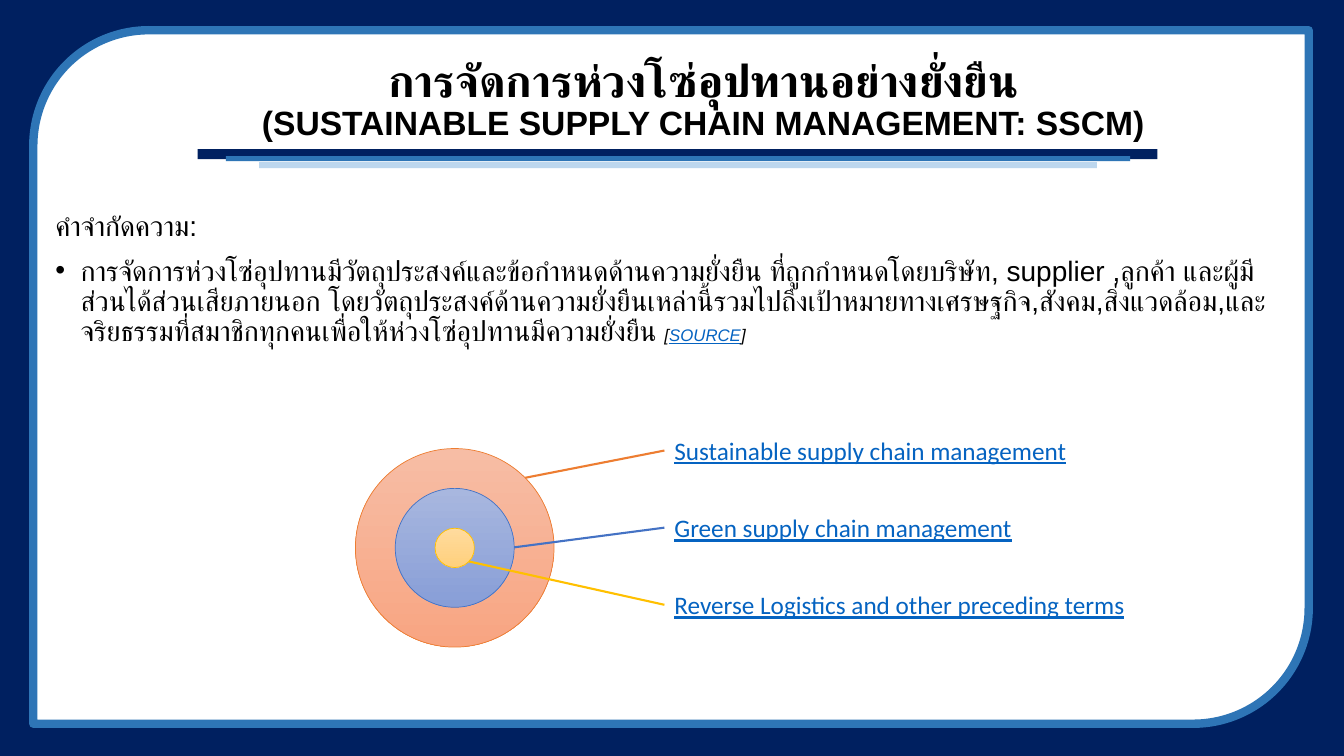
from lxml import etree
from pptx import Presentation
from pptx import util as u
from pptx.dml.color import RGBColor
from pptx.enum import shapes, text
from pptx.oxml.ns import qn

# Content
HEADING = ["การจัดการห่วงโซ่อุปทานอย่างยั่งยืน", "(SUSTAINABLE SUPPLY CHAIN MANAGEMENT: SSCM)"]
HEADING_SIZES = [32, 24]
LEAD = "คำจำกัดความ:"
DEFINITION = (
    "การจัดการห่วงโซ่อุปทานมีวัตถุประสงค์และข้อกำหนดด้านความยั่งยืน ที่ถูกกำหนดโดยบริษัท, supplier ,ลูกค้า "
    "และผู้มีส่วนได้ส่วนเสียภายนอก โดยวัตถุประสงค์ด้านความยั่งยืนเหล่านี้รวมไปถึงเป้าหมายทางเศรษฐกิจ,สังคม,"
    "สิ่งแวดล้อม,และจริยธรรมที่สมาชิกทุกคนเพื่อให้ห่วงโซ่อุปทานมีความยั่งยืน "
)
CITATION = ["[", "SOURCE", "]"]
# label, radius, gradient top, gradient bottom, line, leader start
RINGS = [
    ("Sustainable supply chain management", 0.985, "F7BDA5", "F8A582", "ED7D31", (5.21, 4.74)),
    ("Green supply chain management", 0.59, "A8B7DF", "889ED7", "4472C4", (5.1, 5.43)),
    ("Reverse Logistics and other preceding terms", 0.195, "FFDB9E", "FFD07C", "FFC000", (4.65, 5.57)),
]
# left, top, width, height, colour
RULES = [
    (1.96, 1.48, 9.52, 0.1, "002060"),
    (2.24, 1.55, 8.97, 0.05, "2E75B6"),
    (2.57, 1.61, 8.31, 0.06, "BDD7EE"),
]
BLACK, LINK = "000000", "0563C1"
CENTER_X, CENTER_Y = 4.51, 5.435
LABEL_X, LABEL_Y, LABEL_STEP, LABEL_HEIGHT = 6.59, 4.47, 0.765, 0.4

deck = Presentation()
deck.slide_width, deck.slide_height = u.Inches(13.33), u.Inches(7.5)
slide = deck.slides.add_slide(deck.slide_layouts[1])


def rgb(value):
    return RGBColor.from_string(value)


def place(part, *box):
    part.left, part.top, part.width, part.height = map(u.Inches, box)


def add_part(kind, box, fill=None, line=None, weight=0):
    part = slide.shapes.add_shape(kind, *map(u.Inches, box))
    part.shadow.inherit = False
    if fill:
        part.fill.solid()
        part.fill.fore_color.rgb = rgb(fill)
    if line:
        part.line.color.rgb = rgb(line)
        part.line.width = u.Pt(weight)
    else:
        part.line.fill.background()
    return part


def style(run, size, color=BLACK, face="Arial", bold=False, italic=False, underline=False):
    font = run.font
    font.name, font.size, font.color.rgb = face, u.Pt(size), rgb(color)
    font.bold, font.italic, font.underline = bold, italic, underline
    # Typeface for the Thai script
    etree.SubElement(font._element, qn("a:cs")).set("typeface", face)


def set_bullet(paragraph, indent, mark=None):
    props = paragraph._p.get_or_add_pPr()
    props.set("marL", str(u.Inches(indent)))
    props.set("indent", str(-u.Inches(indent)))
    if mark:
        etree.SubElement(props, qn("a:buFont")).set("typeface", "Arial")
        etree.SubElement(props, qn("a:buChar")).set("char", mark)
    else:
        etree.SubElement(props, qn("a:buNone"))


# Frame and rules under the heading
add_part(shapes.MSO_SHAPE.RECTANGLE, (0, 0, 13.33, 7.5), "002060")
add_part(shapes.MSO_SHAPE.ROUND_2_DIAG_RECTANGLE, (0.33, 0.3, 12.65, 6.88), "FFFFFF", "2E75B6", 6)
for *box, color in RULES:
    add_part(shapes.MSO_SHAPE.RECTANGLE, box, color)

# Concentric rings, outermost first
for label, radius, top, bottom, color, start in RINGS:
    box = (CENTER_X - radius, CENTER_Y - radius, 2 * radius, 2 * radius)
    ring = add_part(shapes.MSO_SHAPE.OVAL, box, line=color, weight=0.5)
    ring.fill.gradient()
    ring.fill.gradient_angle = 270
    for stop, shade in zip(ring.fill.gradient_stops, (top, bottom)):
        stop.color.rgb = rgb(shade)

# Labels and leader lines
for row, (label, radius, top, bottom, color, start) in enumerate(RINGS):
    middle = LABEL_Y + row * LABEL_STEP
    caption = slide.shapes.add_textbox(
        *map(u.Inches, (LABEL_X, middle - LABEL_HEIGHT / 2, 4.72, LABEL_HEIGHT)))
    caption.text_frame.text = label
    style(caption.text_frame.paragraphs[0].runs[0], 18, LINK, "Calibri", underline=True)
    leader = slide.shapes.add_connector(
        shapes.MSO_CONNECTOR.STRAIGHT, *map(u.Inches, (*start, LABEL_X, middle)))
    leader.line.color.rgb = rgb(color)
    leader.line.width = u.Pt(1.5)
    etree.SubElement(leader._element.spPr, qn("a:effectLst"))

# Heading and definition sit above the frame
heading, body = slide.shapes.title, slide.placeholders[1]
for holder in (heading, body):
    slide.shapes._spTree.append(holder._element)
    holder.text_frame.word_wrap = True
    holder.text_frame.auto_size = text.MSO_AUTO_SIZE.NONE

place(heading, 1.8, 0.49, 10.35, 1.02)
heading.text_frame.vertical_anchor = text.MSO_ANCHOR.MIDDLE
heading.text_frame.text = "\v".join(HEADING)
title_line = heading.text_frame.paragraphs[0]
title_line.alignment = text.PP_ALIGN.CENTER
title_line.line_spacing = 0.9
for run, size in zip(title_line.runs, HEADING_SIZES):
    style(run, size, bold=True)

place(body, 0.45, 2.06, 12.43, 3.17)
body.text_frame.text = LEAD
lead = body.text_frame.paragraphs[0]
definition = body.text_frame.add_paragraph()
definition.text = DEFINITION
set_bullet(lead, 0)
set_bullet(definition, 0.25, "•")
for paragraph, gap in ((lead, 0), (definition, 10)):
    paragraph.line_spacing = 0.9
    paragraph.space_before = u.Pt(gap)
    style(paragraph.runs[0], 20)
for piece in CITATION:
    run = definition.add_run()
    run.text = piece
    linked = piece == "SOURCE"
    style(run, 12, LINK if linked else BLACK, italic=True, underline=linked)

deck.save("out.pptx")
